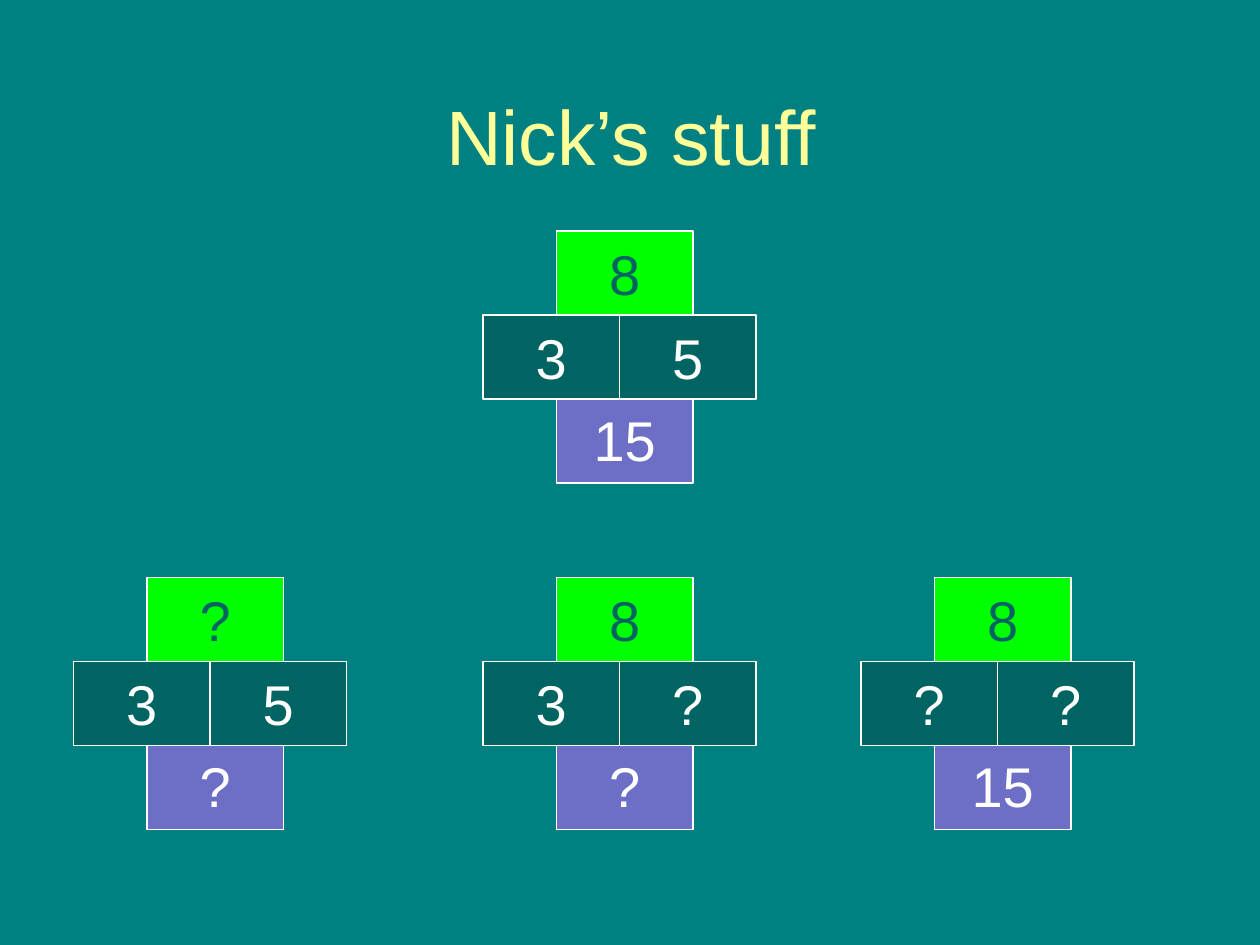
"""Build a slide of number crosses: sum on top, two factors, product below."""
from dataclasses import dataclass

from pptx import Presentation
from pptx import util as u
from pptx.dml.color import RGBColor
from pptx.enum import shapes, text


@dataclass(frozen=True)
class Theme:
    back: str = "008080"
    head: str = "FFFF99"
    dark: str = "006462"
    sum: str = "00FF00"
    prod: str = "6D6FC7"
    light: str = "FFFFFF"
    font: str = "Arial"
    big: int = 44
    mid: int = 32
    rule: float = 0.75


@dataclass(frozen=True)
class Cross:
    col: int
    row: int
    sum: str
    left: str
    right: str
    prod: str


THEME = Theme()
UNIT = u.Inches(10) // 120
WIDE, HIGH, STEP = 13, 8, 7
CROSSES = (
    Cross(46, 22, "8", "3", "5", "15"),
    Cross(7, 55, "?", "3", "5", "?"),
    Cross(46, 55, "8", "3", "?", "?"),
    Cross(82, 55, "8", "?", "?", "15"),
)


def write(shape, words: str, *, size: int, color: str, wrap: bool = False,
          anchor=text.MSO_ANCHOR.MIDDLE) -> None:
    """Put centred text in a shape."""
    frame = shape.text_frame
    frame.word_wrap = wrap
    frame.vertical_anchor = anchor
    para = frame.paragraphs[0]
    para.alignment = text.PP_ALIGN.CENTER
    run = para.add_run()
    run.text = words
    run.font.name = THEME.font
    run.font.size = u.Pt(size)
    run.font.color.rgb = RGBColor.from_string(color)


def draw_cell(group, col: int, row: int, words: str, fill: str, ink: str,
              anchor=text.MSO_ANCHOR.MIDDLE) -> None:
    """Draw one outlined cell at a grid place."""
    cell = group.shapes.add_shape(
        shapes.MSO_SHAPE.RECTANGLE,
        col * UNIT, row * UNIT, WIDE * UNIT, HIGH * UNIT)
    cell.shadow.inherit = False
    cell.fill.solid()
    cell.fill.fore_color.rgb = RGBColor.from_string(fill)
    cell.line.color.rgb = RGBColor.from_string(THEME.light)
    cell.line.width = u.Pt(THEME.rule)
    write(cell, words, size=THEME.mid, color=ink, anchor=anchor)


def draw_cross(slide, cross: Cross) -> None:
    """Draw the four cells of a cross as one group."""
    group = slide.shapes.add_group_shape()
    mid = cross.row + HIGH
    draw_cell(group, cross.col, mid, cross.left, THEME.dark, THEME.light)
    draw_cell(group, cross.col + WIDE, mid, cross.right, THEME.dark, THEME.light)
    draw_cell(group, cross.col + STEP, mid + HIGH, cross.prod,
              THEME.prod, THEME.light, text.MSO_ANCHOR.TOP)
    draw_cell(group, cross.col + STEP, cross.row, cross.sum, THEME.sum, THEME.dark)


def main() -> None:
    """Build and save the slide."""
    deck = Presentation()
    deck.slide_width, deck.slide_height = 120 * UNIT, 90 * UNIT
    slide = deck.slides.add_slide(deck.slide_layouts[6])
    slide.background.fill.solid()
    slide.background.fill.fore_color.rgb = RGBColor.from_string(THEME.back)
    title = slide.shapes.add_textbox(
        u.Inches(0.51), u.Inches(0.44), 108 * UNIT, 15 * UNIT)
    write(title, "Nick’s stuff", size=THEME.big, color=THEME.head, wrap=True)
    for cross in CROSSES:
        draw_cross(slide, cross)
    deck.save("out.pptx")


if __name__ == "__main__":
    main()
